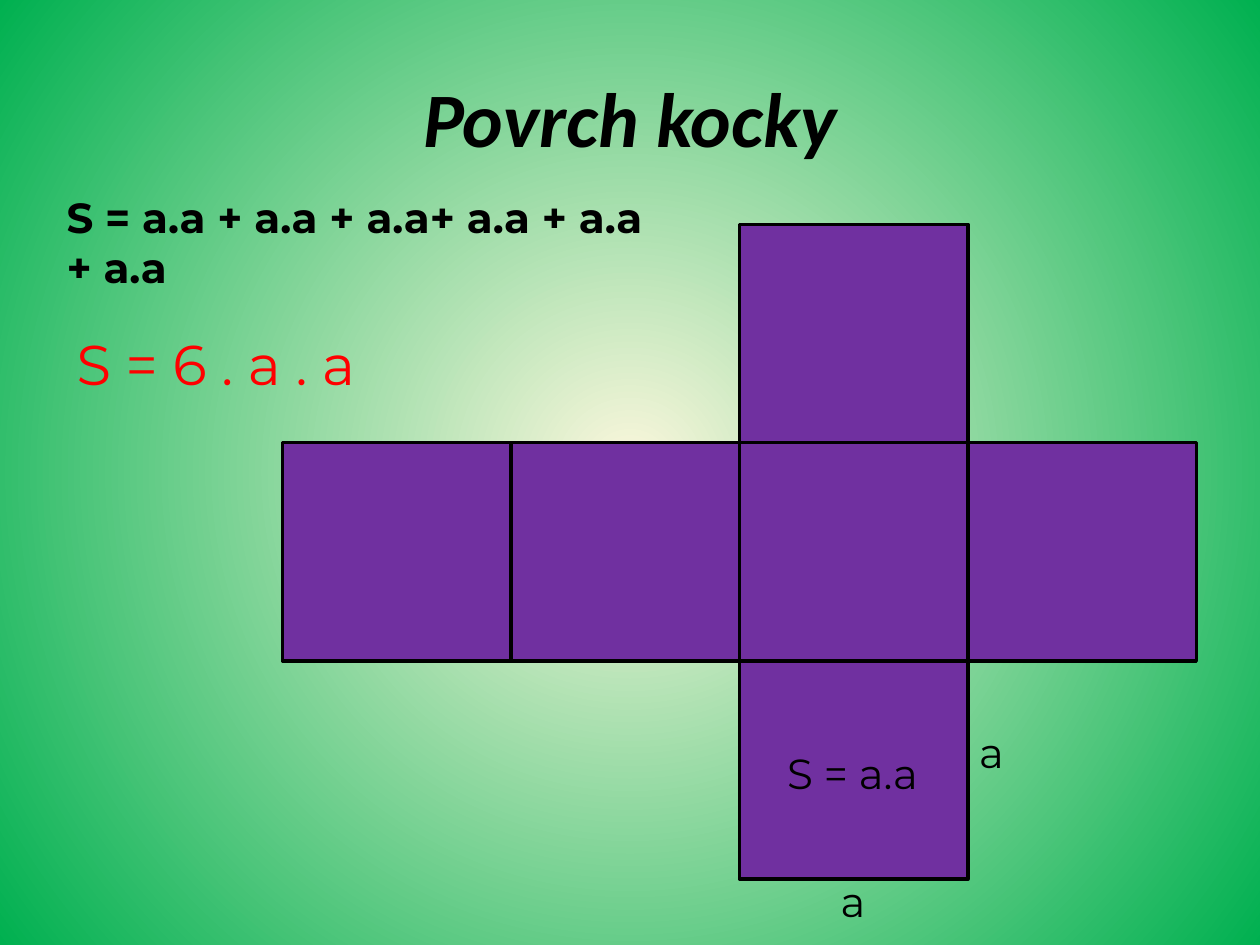
"""Build a slide on the surface area of a cube, with its unfolded net."""
from dataclasses import dataclass

from lxml import etree
from pptx import Presentation
from pptx import util as u
from pptx.dml.color import RGBColor
from pptx.enum import shapes, text
from pptx.oxml.ns import qn

CREAM = RGBColor(0xFC, 0xF7, 0xDD)
GREEN = RGBColor(0x00, 0xB0, 0x50)
PURPLE = RGBColor(0x70, 0x30, 0xA0)
RED = RGBColor(0xFF, 0x00, 0x00)
BLACK = RGBColor(0x00, 0x00, 0x00)

SLIDE_WIDTH, SLIDE_HEIGHT = u.Inches(10), u.Inches(7.5)
NET_LEFT, NET_TOP = 22.43, 23.73
FACE_WIDTH, FACE_HEIGHT = 18.13, 23.1


@dataclass(frozen=True)
class Area:
    """A rectangle in percent of the slide's width and height."""
    left: float
    top: float
    width: float
    height: float

    def lengths(self) -> tuple[int, int, int, int]:
        """Return the rectangle as slide lengths."""
        return (int(SLIDE_WIDTH * self.left / 100), int(SLIDE_HEIGHT * self.top / 100),
                int(SLIDE_WIDTH * self.width / 100), int(SLIDE_HEIGHT * self.height / 100))


@dataclass(frozen=True)
class Face:
    """A cube face placed by column and row of the net."""
    column: int
    row: int


@dataclass(frozen=True)
class Label:
    """A line of text and its look."""
    words: str
    area: Area
    size: int = 24
    font: str = "Montserrat"
    color: RGBColor = BLACK
    bold: bool = False
    italic: bool = False
    align: text.PP_ALIGN = text.PP_ALIGN.CENTER
    anchor: text.MSO_ANCHOR = text.MSO_ANCHOR.TOP


FACES = [Face(2, 1), Face(2, 2), Face(3, 1), Face(2, 0), Face(1, 1), Face(0, 1)]

LABELS = [
    Label("Povrch kocky", Area(5, 4, 90, 16.67), size=44, font="Calibri",
          bold=True, italic=True, anchor=text.MSO_ANCHOR.MIDDLE),
    Label("S = 6 . a . a", Area(5.1, 34.27, 29.3, 9.87), size=32, color=RED,
          align=text.PP_ALIGN.LEFT),
    Label("a", Area(62.6, 92, 10.2, 6.67)),
    Label("a", Area(73.6, 76.27, 10.2, 6.67)),
    Label("S = a.a", Area(59.4, 78.4, 16.5, 6.67)),
    Label("S = a.a + a.a + a.a+ a.a + a.a + a.a", Area(4.3, 19.6, 48, 12.13),
          bold=True, align=text.PP_ALIGN.LEFT),
]


def paint_background(page) -> None:
    """Fill the page with a gradient that runs outwards from its centre."""
    fill = page.background.fill
    fill.gradient()
    for stop, color in zip(fill.gradient_stops, (CREAM, GREEN)):
        stop.color.rgb = color
    gradient = next(page.element.iter(qn("a:gradFill")))
    gradient.remove(gradient.find(qn("a:lin")))
    circle = etree.SubElement(gradient, qn("a:path"), {"path": "circle"})
    etree.SubElement(circle, qn("a:fillToRect"), dict.fromkeys("ltrb", "50000"))


def draw_face(page, face: Face) -> None:
    """Draw one face of the net."""
    area = Area(NET_LEFT + face.column * FACE_WIDTH, NET_TOP + face.row * FACE_HEIGHT,
                FACE_WIDTH, FACE_HEIGHT)
    shape = page.shapes.add_shape(shapes.MSO_SHAPE.RECTANGLE, *area.lengths())
    shape.shadow.inherit = False
    shape.fill.solid()
    shape.fill.fore_color.rgb = PURPLE
    shape.line.color.rgb = BLACK
    shape.line.width = u.Pt(2)


def draw_label(page, label: Label) -> None:
    """Write one label in a wrapping text box."""
    box = page.shapes.add_textbox(*label.area.lengths())
    frame = box.text_frame
    frame.word_wrap = True
    frame.vertical_anchor = label.anchor
    para = frame.paragraphs[0]
    para.text = label.words
    para.alignment = label.align
    para.font.name = label.font
    para.font.size = u.Pt(label.size)
    para.font.bold = label.bold
    para.font.italic = label.italic
    para.font.color.rgb = label.color


def main() -> None:
    """Build and save the deck."""
    deck = Presentation()
    deck.slide_width, deck.slide_height = SLIDE_WIDTH, SLIDE_HEIGHT
    page = deck.slides.add_slide(deck.slide_layouts[6])
    paint_background(page)
    for face in FACES:
        draw_face(page, face)
    for label in LABELS:
        draw_label(page, label)
    deck.save("out.pptx")


if __name__ == "__main__":
    main()
